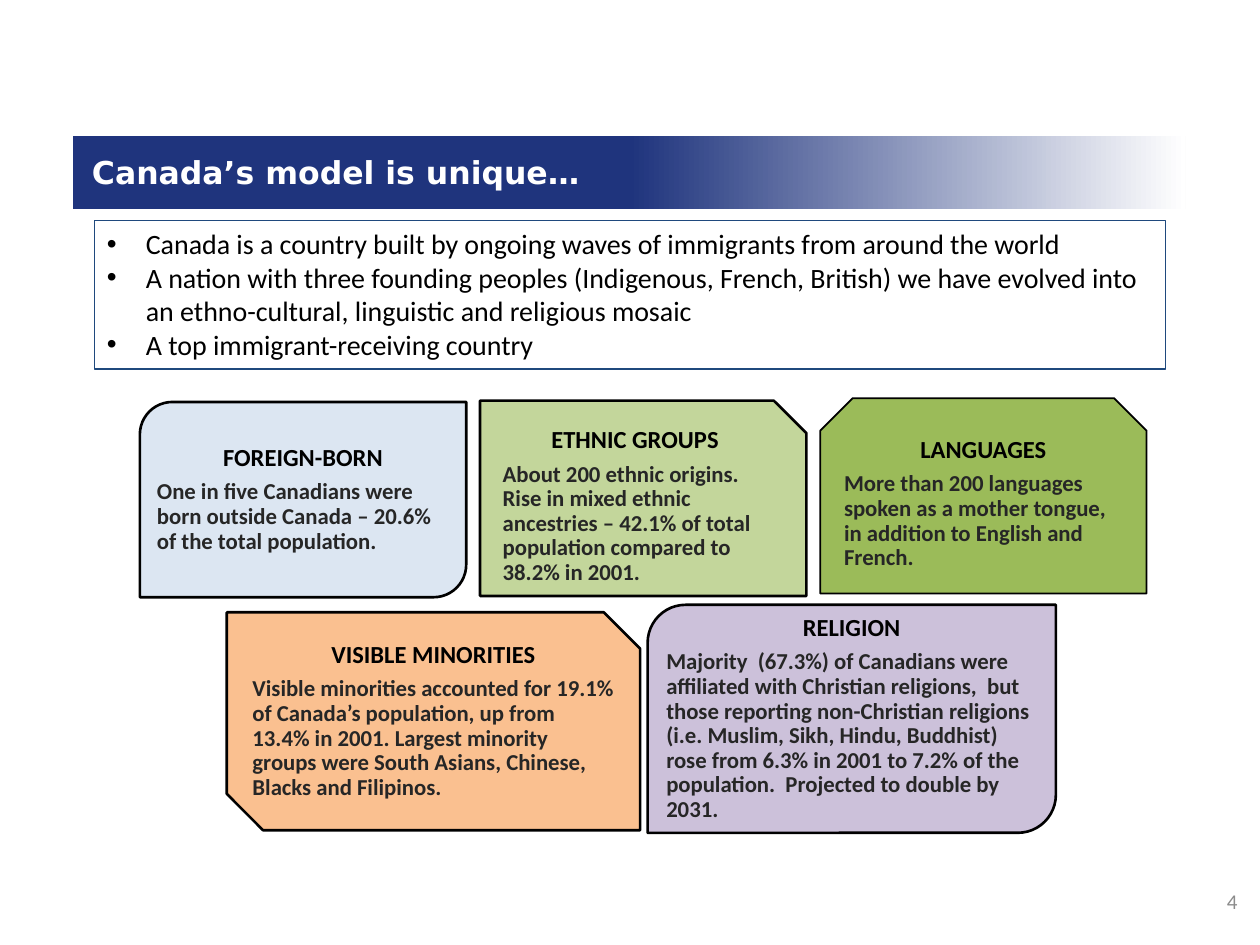
from lxml import etree
from pptx import Presentation, util as u
from pptx.dml.color import RGBColor
from pptx.enum import shapes, text
from pptx.oxml.ns import qn

NAVY = RGBColor(0x1F, 0x34, 0x7D)
BLUE = RGBColor(0x1F, 0x49, 0x7D)
WHITE = RGBColor(0xFF, 0xFF, 0xFF)
BLACK = RGBColor(0, 0, 0)
CHARCOAL = RGBColor(0x26, 0x26, 0x26)
GREY = RGBColor(0x8C, 0x8C, 0x8C)
ICE = RGBColor(0xDC, 0xE6, 0xF2)
LIGHT_GREEN = RGBColor(0xC3, 0xD6, 0x9B)
GREEN = RGBColor(0x9B, 0xBB, 0x59)
ORANGE = RGBColor(0xFA, 0xC0, 0x90)
LILAC = RGBColor(0xCC, 0xC1, 0xDA)

KIND = shapes.MSO_SHAPE
ALIGN = text.PP_ALIGN
ANCHOR = text.MSO_ANCHOR

CARD_LEFT, CARD_PITCH = 1.11, 2.7
CARD_WIDTH, CARD_HEIGHT = 2.59, 1.55

POINTS = (
    "Canada is a country built by ongoing waves of immigrants from around the world",
    "A nation with three founding peoples (Indigenous, French, British) we have evolved into "
    "an ethno-cultural, linguistic and religious mosaic",
    "A top immigrant-receiving country",
)

TOP_CARDS = (
    (KIND.ROUND_2_DIAG_RECTANGLE, 3.19, ICE, 1.5, 0, "FOREIGN-BORN",
     "One in five Canadians were born outside Canada – 20.6% of the total population."),
    (KIND.SNIP_1_RECTANGLE, 3.18, LIGHT_GREEN, 1.5, 0.12, "ETHNIC GROUPS",
     "About 200 ethnic origins.  Rise in mixed ethnic ancestries – 42.1% of total "
     "population compared to 38.2% in 2001."),
    (KIND.SNIP_2_SAME_RECTANGLE, 3.16, GREEN, 1, 0, "LANGUAGES",
     "More than 200 languages spoken as a mother tongue, in addition to English and French."),
)

BOTTOM_CARDS = (
    (KIND.SNIP_2_DIAG_RECTANGLE, (1.8, 4.86, 3.28, 1.73), ORANGE, "VISIBLE MINORITIES",
     "Visible minorities accounted for 19.1% of Canada’s population, up from 13.4% in 2001. "
     "Largest minority groups were South Asians, Chinese, Blacks and Filipinos."),
    (KIND.ROUND_2_DIAG_RECTANGLE, (5.14, 4.8, 3.24, 1.81), LILAC, "RELIGION",
     "Majority  (67.3%) of Canadians were affiliated with Christian religions,  but those "
     "reporting non-Christian religions (i.e. Muslim, Sikh, Hindu, Buddhist) rose from 6.3% "
     "in 2001 to 7.2% of the population.  Projected to double by 2031."),
)


def apply(target, **values):
    """Set each named attribute on the target."""
    for name, value in values.items():
        setattr(target, name, value)


def write(paragraph, words, size, color, bold=False, font="Calibri", **layout):
    """Fill a paragraph with one formatted run."""
    apply(paragraph, **layout)
    run = paragraph.add_run()
    run.text = words
    apply(run.font, size=u.Pt(size), bold=bold, name=font)
    run.font.color.rgb = color


def indent(paragraph, margin, first=0, bullet=None):
    """Set the paragraph's indents and optional bullet."""
    properties = paragraph._p.get_or_add_pPr()
    properties.set("marL", str(u.Inches(margin)))
    properties.set("indent", str(u.Inches(first)))
    if bullet:
        etree.SubElement(properties, qn("a:buFont")).set("typeface", "Arial")
        etree.SubElement(properties, qn("a:buChar")).set("char", bullet)


def add_panel(slide, kind, box, fill, line, weight):
    """Add a flat outlined shape."""
    panel = slide.shapes.add_shape(kind, *map(u.Inches, box))
    panel.shadow.inherit = False
    panel.fill.solid()
    panel.fill.fore_color.rgb = fill
    panel.line.color.rgb = line
    panel.line.width = u.Pt(weight)
    panel.text_frame.word_wrap = True
    return panel


def add_band(slide):
    """Add the fading band behind the title."""
    band = slide.shapes.add_shape(KIND.RECTANGLE, *map(u.Inches, (0.58, 1.08, 8.83, 0.58)))
    band.shadow.inherit = False
    band.line.fill.background()
    band.fill.gradient()
    band.fill.gradient_angle = 0
    for stop, position, color in zip(band.fill.gradient_stops, (0.5, 1), (NAVY, WHITE)):
        stop.position = position
        stop.color.rgb = color
    slide.shapes.title._element.addprevious(band._element)


def add_title(slide, words):
    """Place and format the title."""
    title = slide.shapes.title
    apply(title, left=u.Inches(0.63), top=u.Inches(1.03),
          width=u.Inches(8.75), height=u.Inches(0.67))
    title.text_frame.vertical_anchor = ANCHOR.MIDDLE
    write(title.text_frame.paragraphs[0], words, 18, WHITE, True, "DejaVu Sans",
          alignment=ALIGN.LEFT)


def add_points(slide, points):
    """Add the framed bullet list."""
    panel = add_panel(slide, KIND.RECTANGLE, (0.75, 1.75, 8.5, 1.18), WHITE, BLUE, 0.75)
    frame = panel.text_frame
    frame.vertical_anchor = ANCHOR.TOP
    for number, point in enumerate(points):
        paragraph = frame.add_paragraph() if number else frame.paragraphs[0]
        indent(paragraph, 0.31, -0.31, "•")
        write(paragraph, point, 16, BLACK, alignment=ALIGN.LEFT)


def add_card(slide, kind, box, fill, weight, margin, heading, body):
    """Add a fact card with its heading and body."""
    frame = add_panel(slide, kind, box, fill, BLACK, weight).text_frame
    inset = u.Inches(0.06)
    apply(frame, vertical_anchor=ANCHOR.MIDDLE, margin_left=inset, margin_right=inset,
          margin_top=inset, margin_bottom=inset)
    spacing = {"line_spacing": 0.9, "space_after": u.Pt(4.9)}
    write(frame.paragraphs[0], heading, 14, BLACK, True, alignment=ALIGN.CENTER, **spacing)
    fact = frame.add_paragraph()
    indent(fact, margin)
    write(fact, body, 13, CHARCOAL, True, alignment=ALIGN.LEFT, **spacing)


def add_page_number(slide, number):
    """Add the page number in the corner."""
    frame = slide.shapes.add_textbox(*map(u.Inches, (9, 6.95, 0.92, 0.4))).text_frame
    apply(frame, word_wrap=True, vertical_anchor=ANCHOR.MIDDLE)
    write(frame.paragraphs[0], number, 12, GREY, alignment=ALIGN.RIGHT)


def main():
    """Build the slide and save it."""
    deck = Presentation()
    apply(deck, slide_width=u.Inches(10), slide_height=u.Inches(7.5))
    slide = deck.slides.add_slide(deck.slide_layouts[5])
    add_band(slide)
    add_title(slide, "Canada’s model is unique…")
    add_page_number(slide, "4")
    add_points(slide, POINTS)
    for column, (kind, top, *details) in enumerate(TOP_CARDS):
        box = (CARD_LEFT + column * CARD_PITCH, top, CARD_WIDTH, CARD_HEIGHT)
        add_card(slide, kind, box, *details)
    for kind, box, fill, heading, body in BOTTOM_CARDS:
        add_card(slide, kind, box, fill, 1.5, 0, heading, body)
    deck.save("out.pptx")


if __name__ == "__main__":
    main()
